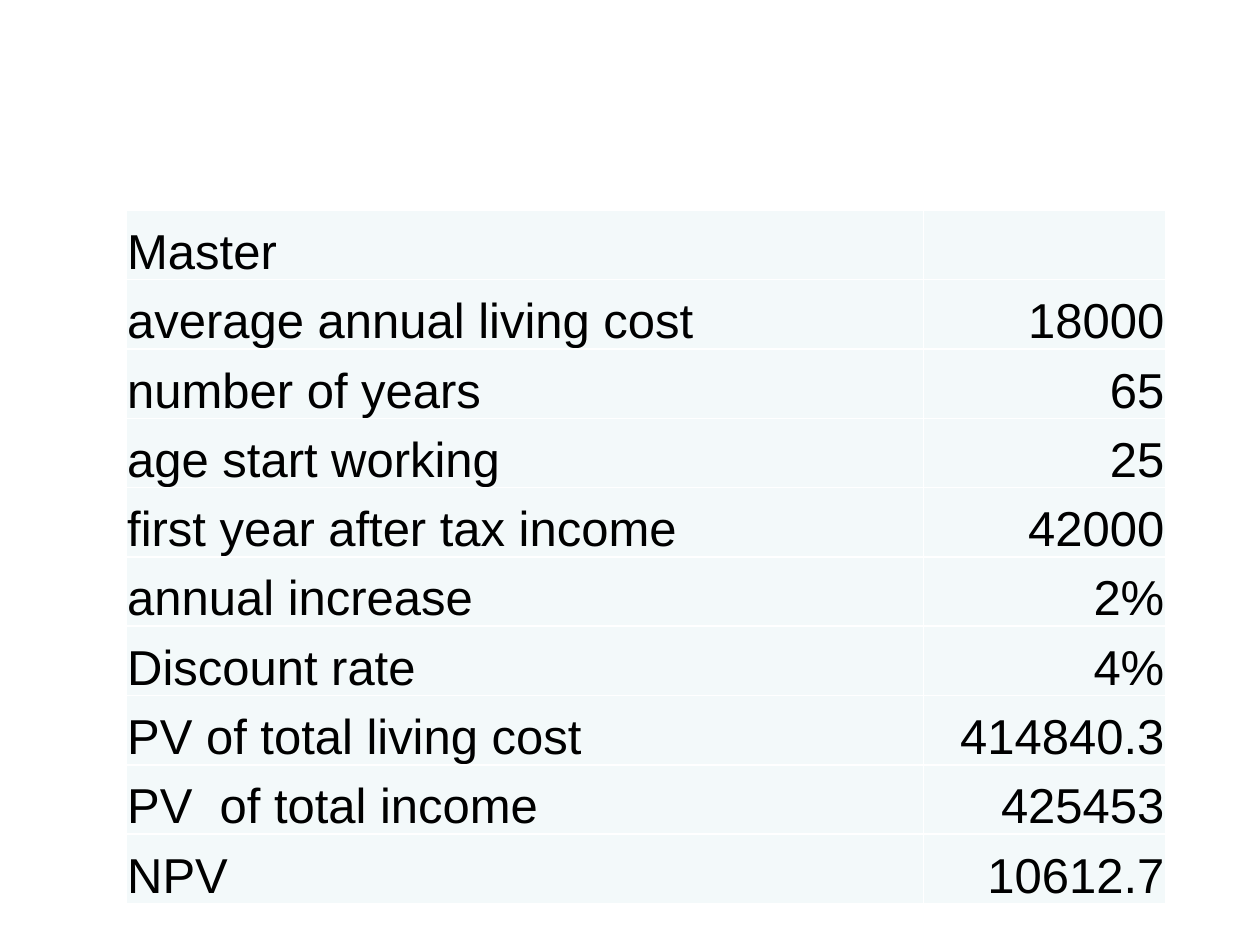
from lxml.etree import SubElement
from pptx import Presentation
from pptx.dml.color import RGBColor as RGB
from pptx.enum.text import MSO_ANCHOR as ANCHOR, PP_ALIGN as ALIGN
from pptx.oxml.ns import qn
from pptx.util import Inches, Pt

COLORS = {"text": "000000", "cell": "F3F9FA", "border": "FFFFFF"}
ROWS = [
    ("Master", ""),
    ("average annual living cost", "18000"),
    ("number of years", "65"),
    ("age start working", "25"),
    ("first year after tax income", "42000"),
    ("annual increase", "2%"),
    ("Discount rate", "4%"),
    ("PV of total living cost", "414840.3"),
    ("PV  of total income", "425453"),
    ("NPV", "10612.7"),
]
COL_WIDTHS = [Inches(6.33), Inches(1.92)]
ROW_HEIGHT = Inches(0.55)
ALIGNS = [ALIGN.LEFT, ALIGN.RIGHT]


def write(tf, text, size=28, font="Arial", color="text", align=ALIGN.LEFT):
    p = tf.paragraphs[0]
    p.alignment = align
    r = p.add_run()
    r.text = text
    r.font.size = Pt(size)
    r.font.name = font
    r.font.color.rgb = RGB.from_string(COLORS[color])


def add_borders(cell, color="border", width=1):
    tc_pr = cell._tc.get_or_add_tcPr()
    for side in ("a:lnL", "a:lnR", "a:lnT", "a:lnB"):
        ln = SubElement(tc_pr, qn(side), w=str(Pt(width)))
        SubElement(SubElement(ln, qn("a:solidFill")), qn("a:srgbClr"), val=COLORS[color])


prs = Presentation()
prs.slide_width, prs.slide_height = Inches(10), Inches(7.5)
s = prs.slides.add_slide(prs.slide_layouts[6])

table = s.shapes.add_table(
    len(ROWS), len(COL_WIDTHS),
    Inches(1), Inches(1.67), sum(COL_WIDTHS), ROW_HEIGHT * len(ROWS),
).table
table.first_row = table.horz_banding = False

for col, width in zip(table.columns, COL_WIDTHS):
    col.width = width

for row, values in zip(table.rows, ROWS):
    row.height = ROW_HEIGHT
    for cell, value, align in zip(row.cells, values, ALIGNS):
        add_borders(cell)
        cell.fill.solid()
        cell.fill.fore_color.rgb = RGB.from_string(COLORS["cell"])
        cell.vertical_anchor = ANCHOR.BOTTOM
        cell.margin_left = cell.margin_right = cell.margin_top = Inches(0.01)
        cell.margin_bottom = 0
        if value:
            write(cell.text_frame, value, align=align)

prs.save("out.pptx")
